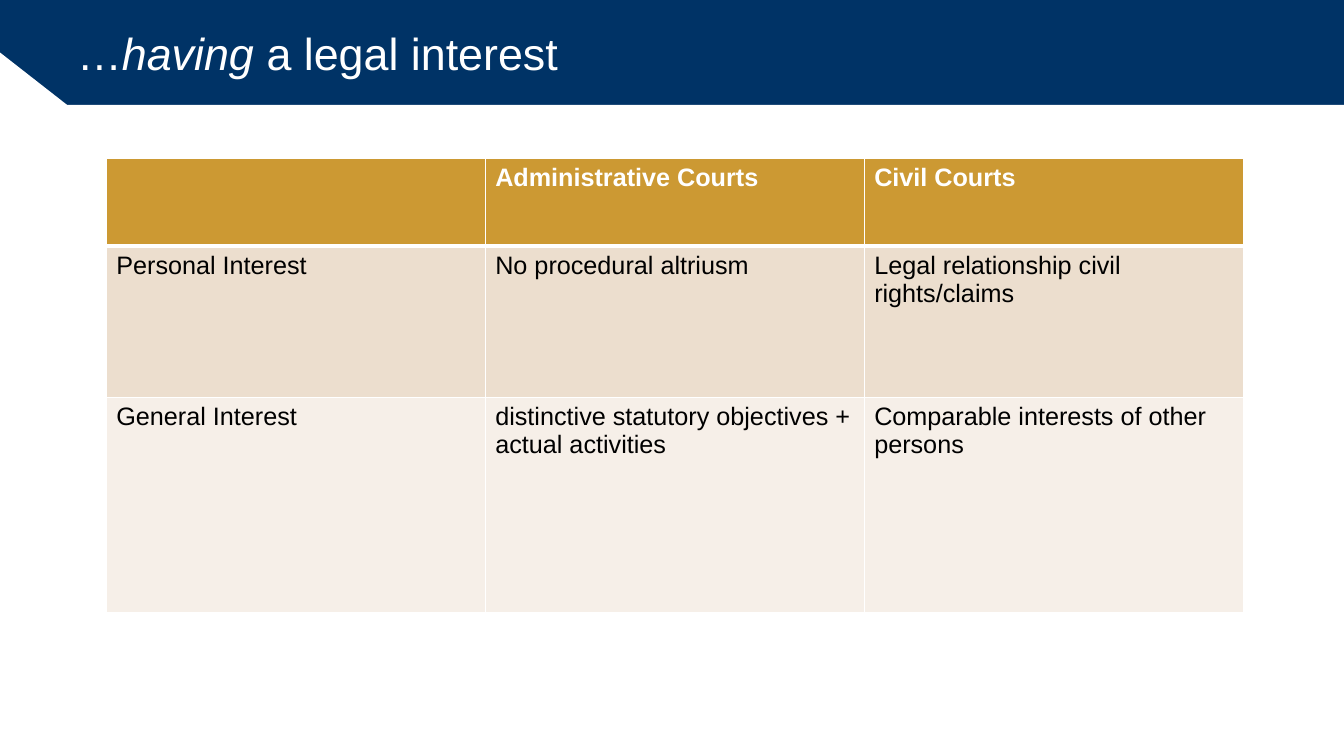
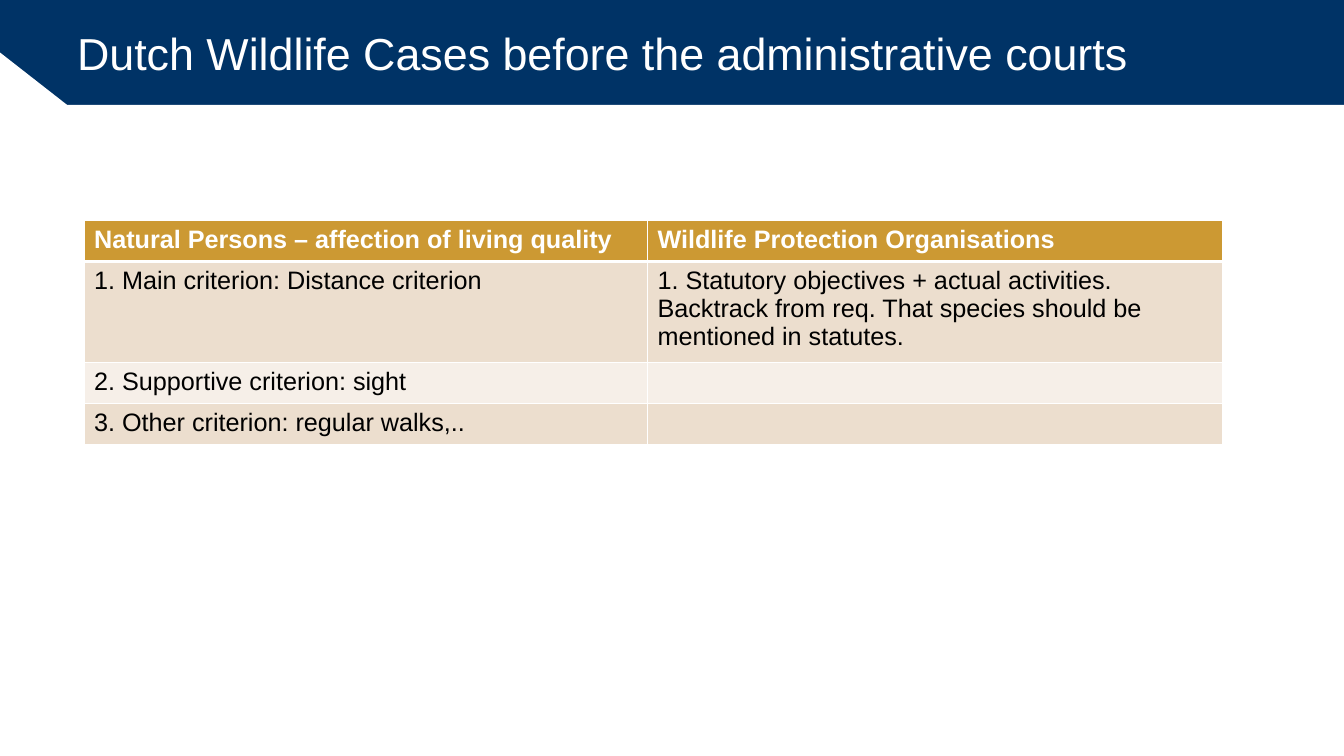
from lxml import etree
from pptx import Presentation
from pptx.dml.color import RGBColor
from pptx.enum.text import MSO_ANCHOR
from pptx.oxml.ns import qn
from pptx.util import Pt

NAVY = RGBColor(0x00, 0x33, 0x66)
GOLD = RGBColor(0xCC, 0x99, 0x33)
SAND = RGBColor(0xEC, 0xDE, 0xCE)
CREAM = RGBColor(0xF6, 0xEF, 0xE8)
WHITE = RGBColor(0xFF, 0xFF, 0xFF)
BLACK = RGBColor(0x00, 0x00, 0x00)
MIDDLE = MSO_ANCHOR.MIDDLE

FONT = "Arial"
WIDTH, HEIGHT = 960, 540
BAND_HEIGHT = 75
NOTCH_WIDTH, NOTCH_TOP = 48, 37.5
TITLE_WIDTH = 864
THIN, THICK = 1, 3


def write_text(paragraph, text, size=18, color=BLACK, bold=False, italic=False):
    run = paragraph.add_run()
    run.text = text
    run.font.name = FONT
    run.font.size = Pt(size)
    run.font.color.rgb = color
    run.font.bold = bold
    run.font.italic = italic


def set_borders(cell, top, bottom):
    properties = cell._tc.get_or_add_tcPr()
    for side, width in (("L", THIN), ("R", THIN), ("T", top), ("B", bottom)):
        line = etree.SubElement(properties, qn(f"a:ln{side}"), w=str(Pt(width)))
        fill = etree.SubElement(line, qn("a:solidFill"))
        etree.SubElement(fill, qn("a:srgbClr"), val=str(WHITE))


class Deck:
    def __init__(self):
        self.presentation = Presentation()
        self.presentation.slide_width = Pt(WIDTH)
        self.presentation.slide_height = Pt(HEIGHT)
        self.slide = None

    def add_slide(self, *title_parts):
        self.slide = self.presentation.slides.add_slide(self.presentation.slide_layouts[6])
        background = self.slide.background.fill
        background.solid()
        background.fore_color.rgb = NAVY
        self.add_page()
        self.add_title(title_parts)

    def add_page(self):
        corners = [(0, NOTCH_TOP), (0, HEIGHT), (WIDTH, HEIGHT), (WIDTH, BAND_HEIGHT)]
        builder = self.slide.shapes.build_freeform(Pt(NOTCH_WIDTH), Pt(BAND_HEIGHT))
        builder.add_line_segments([(Pt(x), Pt(y)) for x, y in corners], close=True)
        page = builder.convert_to_shape()
        page.shadow.inherit = False
        page.fill.solid()
        page.fill.fore_color.rgb = WHITE
        page.line.fill.background()

    def add_title(self, parts):
        box = self.slide.shapes.add_textbox(Pt(NOTCH_WIDTH), 0, Pt(TITLE_WIDTH), Pt(BAND_HEIGHT))
        frame = box.text_frame
        frame.word_wrap = True
        frame.vertical_anchor = MIDDLE
        for text, italic in parts:
            write_text(frame.paragraphs[0], text, size=32, color=WHITE, italic=italic)

    def add_table(self, left, top, widths, heights, rows):
        table = self.slide.shapes.add_table(
            len(heights), len(widths), Pt(left), Pt(top), Pt(sum(widths)), Pt(sum(heights))
        ).table
        table.horz_banding = False
        for column, width in zip(table.columns, widths):
            column.width = Pt(width)
        for index, (row, height, texts) in enumerate(zip(table.rows, heights, rows)):
            row.height = Pt(height)
            header = index == 0
            fill = GOLD if header else (CREAM, SAND)[index % 2]
            for cell, text in zip(row.cells, texts):
                set_borders(cell, THICK if index == 1 else THIN, THICK if header else THIN)
                cell.fill.solid()
                cell.fill.fore_color.rgb = fill
                if text:
                    write_text(
                        cell.text_frame.paragraphs[0], text,
                        color=WHITE if header else BLACK, bold=header,
                    )


def main():
    deck = Deck()

    deck.add_slide(("…", False), ("having ", True), ("a legal interest", False))
    deck.add_table(75.9, 113.4, [270.7] * 3, [62.4, 108, 153.6], [
        ("", "Administrative Courts", "Civil Courts"),
        ("Personal Interest", "No procedural altriusm", "Legal relationship civil rights/claims"),
        ("General Interest", "distinctive statutory objectives + actual activities",
         "Comparable interests of other persons"),
    ])

    deck.add_slide(("Dutch Wildlife Cases before the administrative courts", False))
    deck.add_table(60, 157.7, [402.5, 411], [29.2, 67, 29.2, 29.2], [
        ("Natural Persons – affection of living quality", "Wildlife Protection Organisations"),
        ("1. Main criterion: Distance criterion",
         "1. Statutory objectives + actual activities. Backtrack from req. "
         "That species should be mentioned in statutes."),
        ("2. Supportive criterion: sight", ""),
        ("3. Other criterion: regular walks,..", ""),
    ])

    deck.presentation.save("out.pptx")


if __name__ == "__main__":
    main()
